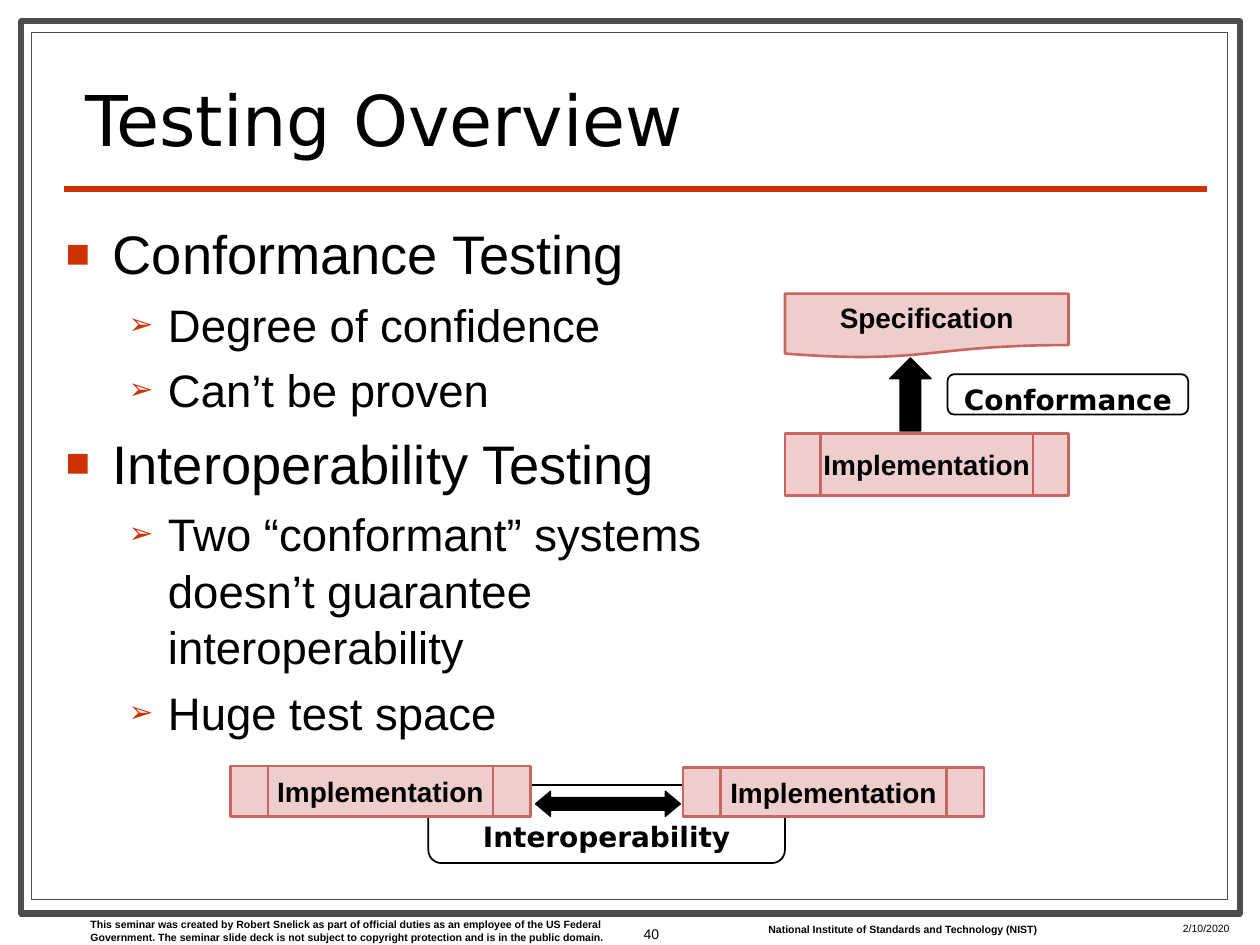
import pptx
import pptx.util
import pptx.dml.color
import pptx.enum.shapes
import pptx.enum.text
import pptx.oxml
import pptx.oxml.ns
import lxml.etree

Pt = pptx.util.Pt
Shape = pptx.enum.shapes.MSO_SHAPE
Align = pptx.enum.text.PP_ALIGN
Anchor = pptx.enum.text.MSO_ANCHOR

THEME = {
    "sans": "Arial", "head": "DejaVu Sans",
    "ink": "000000", "paper": "FFFFFF", "frame": "4D4D4D",
    "accent": "CC3300", "pink": "EECECC", "rose": "C96660",
    "title": 40, "list": (31, 26), "label": 16, "page": 8, "foot": 6,
}

TITLE = ("Testing Overview", (41.76, 30.24, 642.24, 64.8))
POINTS = [
    (0, "Conformance Testing"),
    (1, "Degree of confidence"),
    (1, "Can’t be proven"),
    (0, "Interoperability Testing"),
    (1, "Two “conformant” systems doesn’t guarantee interoperability"),
    (1, "Huge test space"),
]
BODY = (30.24, 120.96, 400.32, 305.28)
LEVELS = [
    {"mark": "■", "size": 75, "left": 27, "hang": 27, "gap": 6},
    {"mark": "➢", "size": 65, "left": 58.5, "hang": 22.5, "gap": 5},
]
FRAMES = [((12.24, 12.24, 696.24, 509.76), 3.5), ((18, 18.72, 683.28, 495.36), 0.75)]
RULE = (36.72, 108, 689.76, 108)
FOOT = [
    ("This seminar was created by Robert Snelick as part of official duties as an employee "
     "of the US Federal Government. The seminar slide deck is not subject to copyright "
     "protection and is in the public domain.",
     (44.64, 521.28, 311.76, 21.6), "foot", True, Align.LEFT, Anchor.TOP),
    ("National Institute of Standards and Technology (NIST)",
     (432, 524.16, 171.36, 14.4), "foot", True, Align.LEFT, Anchor.TOP),
    ("2/10/2020", (668.88, 523.44, 45.36, 11.52), "foot", False, Align.LEFT, Anchor.TOP),
    ("40", (342, 514.8, 41.76, 37.44), "page", False, Align.RIGHT, Anchor.MIDDLE),
]
KINDS = {
    "tag": (Shape.ROUNDED_RECTANGLE, "paper", "ink", 1, "head"),
    "box": (Shape.FLOWCHART_PREDEFINED_PROCESS, "pink", "rose", 1.5, "sans"),
    "doc": (Shape.FLOWCHART_DOCUMENT, "pink", "rose", 1.5, "sans"),
    "up": (Shape.DOWN_ARROW, "ink", "ink", 0.75, "sans"),
    "both": (Shape.LEFT_RIGHT_ARROW, "ink", "ink", 0.75, "sans"),
}
PARTS = [
    ("tag", "Conformance", (541.44, 213.84, 137.52, 23.04), Anchor.TOP),
    ("box", "Implementation", (448.56, 247.68, 162, 35.28), Anchor.MIDDLE),
    ("doc", "Specification", (448.56, 167.76, 162, 36.72), Anchor.MIDDLE),
    ("up", "", (508.32, 204.48, 23.76, 41.76), Anchor.MIDDLE),
    ("tag", "Interoperability", (244.8, 448.56, 203.76, 44.64), Anchor.BOTTOM),
    ("box", "Implementation", (131.76, 437.76, 171.36, 28.8), Anchor.MIDDLE),
    ("both", "", (306, 452.16, 82.8, 14.4), Anchor.MIDDLE),
    ("box", "Implementation", (390.24, 438.48, 172.08, 28.08), Anchor.MIDDLE),
]


def tint(name):
    return pptx.dml.color.RGBColor.from_string(THEME[name])


def style(thing, **vals):
    for key, val in vals.items():
        setattr(thing, key, val)


def place(shape, box):
    style(shape, **dict(zip(("left", "top", "width", "height"), map(Pt, box))))


def type_in(para, text, size, face="sans", bold=False):
    run = para.add_run()
    run.text = text
    style(run.font, size=Pt(size), name=THEME[face], bold=bold)
    run.font.color.rgb = tint("ink")


def draw(slide, kind, box, fill, line, width):
    shape = slide.shapes.add_shape(kind, *map(Pt, box))
    shape.shadow.inherit = False
    shape.fill.solid()
    shape.fill.fore_color.rgb = tint(fill)
    shape.line.color.rgb = tint(line)
    shape.line.width = Pt(width)
    return shape


def mark(para, rank):
    props = para._p.get_or_add_pPr()
    props.set("marL", str(Pt(rank["left"])))
    props.set("indent", str(-Pt(rank["hang"])))
    space = pptx.oxml.ns.nsdecls("a")
    for xml in (
        f'<a:buClr {space}><a:srgbClr val="{THEME["accent"]}"/></a:buClr>',
        f'<a:buSzPct {space} val="{rank["size"] * 1000}"/>',
        f'<a:buFont {space} typeface="{THEME["sans"]}"/>',
        f'<a:buChar {space} char="{rank["mark"]}"/>',
    ):
        props.append(pptx.oxml.parse_xml(xml))


def add_frame(slide):
    for box, width in FRAMES:
        draw(slide, Shape.RECTANGLE, box, "paper", "frame", width)
    rule = slide.shapes.add_connector(
        pptx.enum.shapes.MSO_CONNECTOR.STRAIGHT, *map(Pt, RULE))
    rule.line.color.rgb = tint("accent")
    rule.line.width = Pt(3)
    lxml.etree.SubElement(rule.element.spPr, pptx.oxml.ns.qn("a:effectLst"))
    for text, box, size, bold, align, anchor in FOOT:
        frame = slide.shapes.add_textbox(*map(Pt, box)).text_frame
        style(frame, word_wrap=True, vertical_anchor=anchor)
        frame.paragraphs[0].alignment = align
        type_in(frame.paragraphs[0], text, THEME[size], bold=bold)


def add_text(slide):
    title, body = slide.shapes.title, slide.placeholders[1]
    for shape, box, anchor in ((title, TITLE[1], Anchor.BOTTOM), (body, BODY, Anchor.TOP)):
        place(shape, box)
        style(shape.text_frame, word_wrap=True, vertical_anchor=anchor,
              auto_size=pptx.enum.text.MSO_AUTO_SIZE.NONE)
        shape.element.getparent().append(shape.element)
    para = title.text_frame.paragraphs[0]
    style(para, alignment=Align.LEFT, line_spacing=0.8)
    type_in(para, TITLE[0], THEME["title"], "head")
    frame = body.text_frame
    for i, (level, text) in enumerate(POINTS):
        para = frame.add_paragraph() if i else frame.paragraphs[0]
        rank = LEVELS[level]
        mark(para, rank)
        style(para, level=level, alignment=Align.LEFT, line_spacing=1.04,
              space_before=Pt(rank["gap"] if i else 0))
        type_in(para, text, THEME["list"][level])


def add_parts(slide):
    for kind, text, box, anchor in PARTS:
        form, fill, line, width, face = KINDS[kind]
        shape = draw(slide, form, box, fill, line, width)
        if kind == "up":
            shape.rotation = 180
        if kind == "both":
            shape.adjustments[1] = 0.6
        if text:
            frame = shape.text_frame
            style(frame, word_wrap=kind != "box", vertical_anchor=anchor)
            para = frame.paragraphs[0]
            style(para, alignment=Align.CENTER, line_spacing=0.93 if kind == "doc" else 1.0)
            type_in(para, text, THEME["label"], face, True)


def main():
    deck = pptx.Presentation()
    style(deck, slide_width=Pt(720), slide_height=Pt(540))
    slide = deck.slides.add_slide(deck.slide_layouts[1])
    add_frame(slide)
    add_text(slide)
    add_parts(slide)
    deck.save("out.pptx")


if __name__ == "__main__":
    main()
